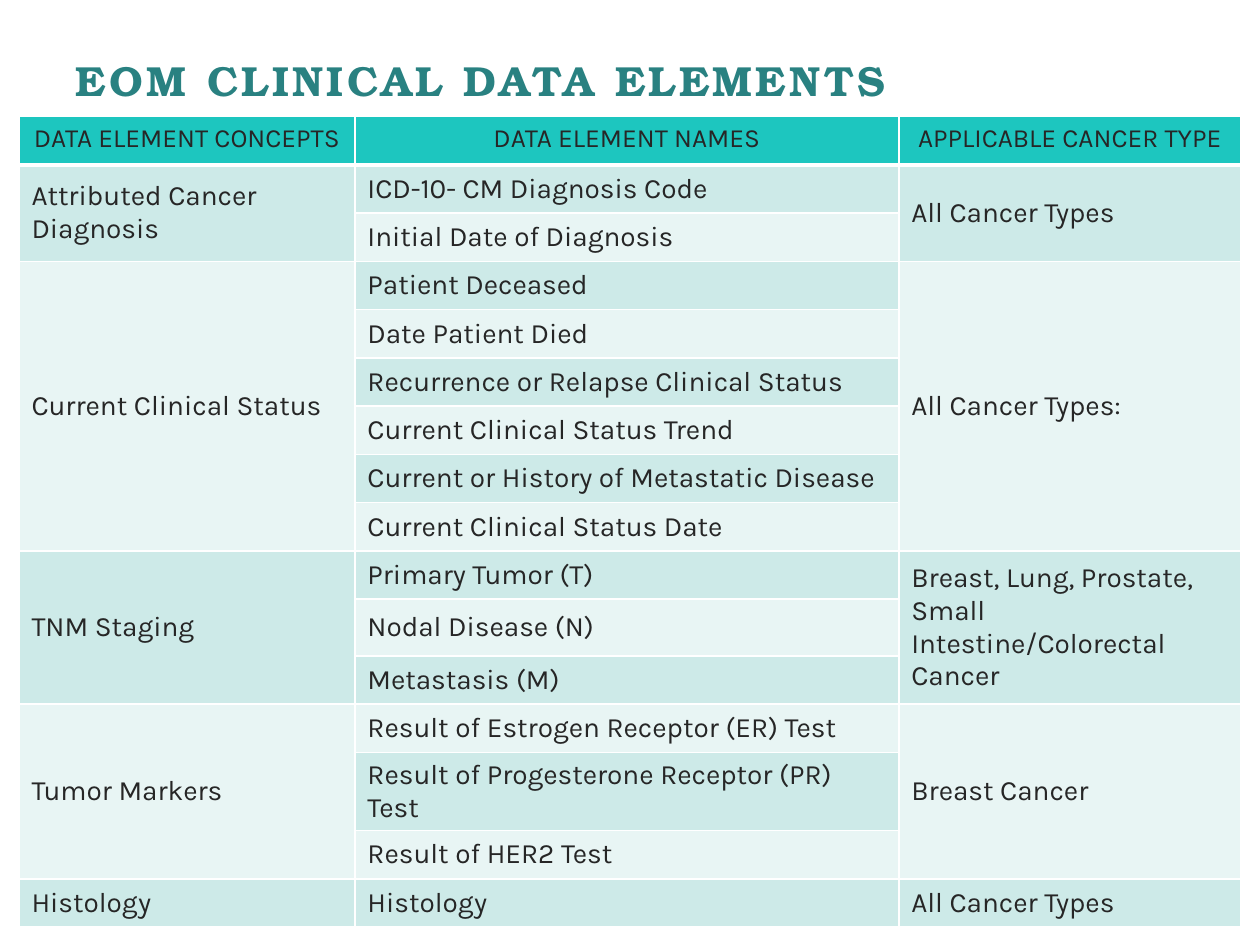
from dataclasses import dataclass

from lxml import etree
from pptx import Presentation
from pptx.dml.color import RGBColor
from pptx.enum.text import MSO_ANCHOR, MSO_AUTO_SIZE, PP_ALIGN
from pptx.oxml.ns import qn
from pptx.util import Pt

PX = 914400 // 120
LEFT, CENTER = PP_ALIGN.LEFT, PP_ALIGN.CENTER
TOP, MIDDLE = MSO_ANCHOR.TOP, MSO_ANCHOR.MIDDLE
NO_FIT = MSO_AUTO_SIZE.NONE


@dataclass(frozen=True)
class Theme:
    title_font: str = "TeX Gyre Bonum"
    body_font: str = "Karla"
    title: str = "298181"
    text: str = "262626"
    header: str = "1DC6BF"
    dark: str = "CDEAE8"
    light: str = "E8F5F4"
    border: str = "FFFFFF"
    title_size: int = 24
    header_size: int = 15
    body_size: int = 16


HEADERS = ["DATA ELEMENT CONCEPTS", "DATA ELEMENT NAMES", "APPLICABLE CANCER TYPE"]
GROUPS = [
    ("Attributed Cancer Diagnosis",
     ["ICD-10- CM Diagnosis Code", "Initial Date of Diagnosis"],
     "All Cancer Types"),
    ("Current Clinical Status",
     ["Patient Deceased", "Date Patient Died",
      "Recurrence or Relapse Clinical Status", "Current Clinical Status Trend",
      "Current or History of Metastatic Disease", "Current Clinical Status Date"],
     "All Cancer Types:"),
    ("TNM Staging",
     ["Primary Tumor (T)", "Nodal Disease (N)", "Metastasis (M)"],
     "Breast, Lung, Prostate, Small Intestine/Colorectal Cancer"),
    ("Tumor Markers",
     ["Result of Estrogen Receptor (ER) Test",
      "Result of Progesterone Receptor (PR) Test", "Result of HER2 Test"],
     "Breast Cancer"),
    ("Histology", ["Histology"], "All Cancer Types"),
]
COL_WIDTHS = [320, 518, 326]
ROW_HEIGHT = 46
TALL_ROWS = {10: 54, 13: 74}


def write(tf, text, *, font, size, color, bold=False, align=LEFT, spacing=0):
    p = tf.paragraphs[0]
    p.alignment = align
    r = p.add_run()
    r.text = text
    r.font.name = font
    r.font.size = Pt(size)
    r.font.bold = bold
    r.font.color.rgb = RGBColor.from_string(color)
    if spacing:
        r.font._element.set("spc", str(spacing * 100))


class Deck:
    def __init__(self, theme, width, height):
        self.theme = theme
        self.prs = Presentation()
        self.prs.slide_width, self.prs.slide_height = width * PX, height * PX
        self.s = self.prs.slides.add_slide(self.prs.slide_layouts[5])

    def title(self, text, x, y, w, h):
        t = self.theme
        sp = self.s.shapes.title
        sp.left, sp.top, sp.width, sp.height = (v * PX for v in (x, y, w, h))
        tf = sp.text_frame
        tf.word_wrap, tf.auto_size = True, NO_FIT
        tf.vertical_anchor = MIDDLE
        write(tf, text, font=t.title_font, size=t.title_size, color=t.title,
              bold=True, spacing=2)

    def borders(self, cell, bottom=1):
        tc_pr = cell._tc.get_or_add_tcPr()
        for side, width in (("L", 1), ("R", 1), ("T", 1), ("B", bottom)):
            ln = etree.SubElement(tc_pr, qn(f"a:ln{side}"), w=str(Pt(width)))
            fill = etree.SubElement(ln, qn("a:solidFill"))
            etree.SubElement(fill, qn("a:srgbClr"), val=self.theme.border)

    def cell(self, cell, text, fill, header=False):
        t = self.theme
        self.borders(cell, 3 if header else 1)
        cell.fill.solid()
        cell.fill.fore_color.rgb = RGBColor.from_string(fill)
        cell.vertical_anchor = TOP if header else MIDDLE
        if text:
            write(cell.text_frame, text, font=t.body_font, color=t.text,
                  size=t.header_size if header else t.body_size,
                  align=CENTER if header else LEFT)

    def table(self, x, y, headers, groups, widths):
        t = self.theme
        count = 1 + sum(len(names) for _, names, _ in groups)
        heights = [TALL_ROWS.get(i, ROW_HEIGHT) for i in range(count)]
        table = self.s.shapes.add_table(
            count, len(widths), x * PX, y * PX,
            sum(widths) * PX, sum(heights) * PX).table
        for col, w in zip(table.columns, widths):
            col.width = w * PX
        for row, h in zip(table.rows, heights):
            row.height = h * PX
        for c, text in enumerate(headers):
            self.cell(table.cell(0, c), text, t.header, header=True)

        bands = (t.dark, t.light)
        row = 1
        for g, (concept, names, cancer) in enumerate(groups):
            last = row + len(names) - 1
            for i, name in enumerate(names):
                r = row + i
                self.cell(table.cell(r, 0), "" if i else concept, bands[g % 2])
                self.cell(table.cell(r, 1), name, bands[(r - 1) % 2])
                self.cell(table.cell(r, 2), "" if i else cancer, bands[g % 2])
            if last > row:
                for c in (0, 2):
                    table.cell(row, c).merge(table.cell(last, c))
            row = last + 1


def main():
    deck = Deck(Theme(), 1200, 900)
    deck.table(18, 111, HEADERS, GROUPS, COL_WIDTHS)
    deck.title("EOM CLINICAL DATA ELEMENTS", 60, 1, 1080, 150)
    deck.prs.save("out.pptx")


if __name__ == "__main__":
    main()
